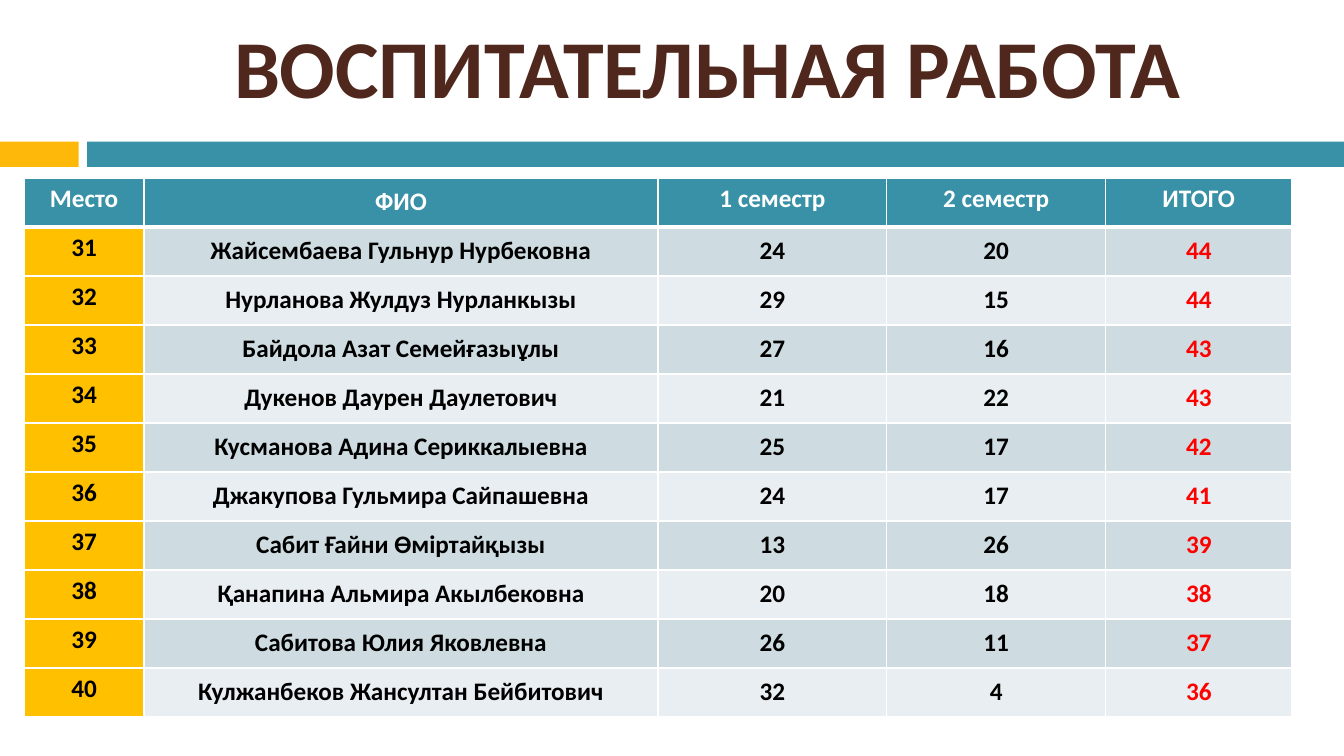
from lxml import etree
from pptx import Presentation
from pptx.dml.color import RGBColor
from pptx.enum.shapes import MSO_SHAPE
from pptx.enum.text import MSO_ANCHOR, PP_ALIGN
from pptx.oxml.ns import qn
from pptx.util import Inches, Pt

# Content
TITLE = "ВОСПИТАТЕЛЬНАЯ РАБОТА"
HEADERS = ("Место", "ФИО", "1 семестр", "2 семестр", "ИТОГО")
FIRST_PLACE = 31
RESULTS = [  # name, first semester, second semester
    ("Жайсембаева Гульнур Нурбековна", 24, 20),
    ("Нурланова Жулдуз Нурланкызы", 29, 15),
    ("Байдола Азат Семейғазыұлы", 27, 16),
    ("Дукенов Даурен Даулетович", 21, 22),
    ("Кусманова Адина Сериккалыевна", 25, 17),
    ("Джакупова Гульмира Сайпашевна", 24, 17),
    ("Сабит Ғайни Өміртайқызы", 13, 26),
    ("Қанапина Альмира Акылбековна", 20, 18),
    ("Сабитова Юлия Яковлевна", 26, 11),
    ("Кулжанбеков Жансултан Бейбитович", 32, 4),
]
COLUMN_WIDTHS = (0.99, 4.25, 1.89, 1.81, 1.54)
PLACE_COLUMN, NAME_COLUMN, TOTAL_COLUMN = 0, 1, 4

# Style
FONT = "Calibri"
WHITE = RGBColor(0xFF, 0xFF, 0xFF)
BLACK = RGBColor(0, 0, 0)
RED = RGBColor(0xFF, 0, 0)
BROWN = RGBColor(0x4F, 0x27, 0x1C)
TEAL = RGBColor(0x38, 0x91, 0xA7)
ORANGE = RGBColor(0xFE, 0xB8, 0x0A)
AMBER = RGBColor(0xFF, 0xC0, 0x00)
BANDS = (RGBColor(0xCE, 0xDC, 0xE1), RGBColor(0xE8, 0xEE, 0xF1))
RECTANGLE = MSO_SHAPE.RECTANGLE
CENTER = PP_ALIGN.CENTER
TOP, MIDDLE = MSO_ANCHOR.TOP, MSO_ANCHOR.MIDDLE


def write(frame, text, size, color):
    paragraph = frame.paragraphs[0]
    paragraph.text = text
    paragraph.alignment = CENTER
    font = paragraph.font
    font.name, font.size, font.bold = FONT, Pt(size), True
    font.color.rgb = color


def add_bar(slide, left, width, color):
    bar = slide.shapes.add_shape(
        RECTANGLE, Inches(left), Inches(1.17), Inches(width), Inches(0.21))
    bar.shadow.inherit = False
    bar.fill.solid()
    bar.fill.fore_color.rgb = color
    bar.line.fill.background()


def set_borders(cell, bottom_width):
    properties = cell._tc.get_or_add_tcPr()
    for side, width in (("L", 1), ("R", 1), ("T", 1), ("B", bottom_width)):
        line = etree.SubElement(properties, qn(f"a:ln{side}"), w=str(Pt(width)))
        fill = etree.SubElement(line, qn("a:solidFill"))
        etree.SubElement(fill, qn("a:srgbClr"), val=str(WHITE))


def fill_cell(cell, row, column, text):
    is_header = row == 0
    if is_header:
        background, color = TEAL, WHITE
    elif column == PLACE_COLUMN:
        background, color = AMBER, BLACK
    else:
        background = BANDS[(row - 1) % 2]
        color = RED if column == TOTAL_COLUMN else BLACK
    set_borders(cell, 3 if is_header else 1)
    cell.fill.solid()
    cell.fill.fore_color.rgb = background

    centered = column == NAME_COLUMN if is_header else column != PLACE_COLUMN
    cell.vertical_anchor = MIDDLE if centered else TOP
    if centered and not is_header:
        cell.margin_left = cell.margin_right = 0
        cell.margin_top = cell.margin_bottom = 0
    write(cell.text_frame, text, 15, color)


def add_results(slide):
    rows = [HEADERS]
    for place, (name, first, second) in enumerate(RESULTS, FIRST_PLACE):
        rows.append((place, name, first, second, first + second))
    table = slide.shapes.add_table(
        len(rows), len(HEADERS), Inches(0.2), Inches(1.47),
        Inches(sum(COLUMN_WIDTHS)), Inches(4.46)).table
    for column, width in zip(table.columns, COLUMN_WIDTHS):
        column.width = Inches(width)
    for row, values in enumerate(rows):
        for column, value in enumerate(values):
            fill_cell(table.cell(row, column), row, column, str(value))


def main():
    presentation = Presentation()
    presentation.slide_width = Inches(11.11)
    presentation.slide_height = Inches(6.25)
    slide = presentation.slides.add_slide(presentation.slide_layouts[6])

    # Bars under the title
    add_bar(slide, 0, 0.65, ORANGE)
    add_bar(slide, 0.72, 10.39, TEAL)

    # Title
    title = slide.shapes.add_textbox(
        Inches(0.89), Inches(0.04), Inches(9.91), Inches(1))
    frame = title.text_frame
    frame.word_wrap = True
    frame.vertical_anchor = MIDDLE
    frame.margin_top = frame.margin_bottom = Inches(0.04)
    write(frame, TITLE, 48.9, BROWN)

    # Table of places
    add_results(slide)
    presentation.save("out.pptx")


if __name__ == "__main__":
    main()
